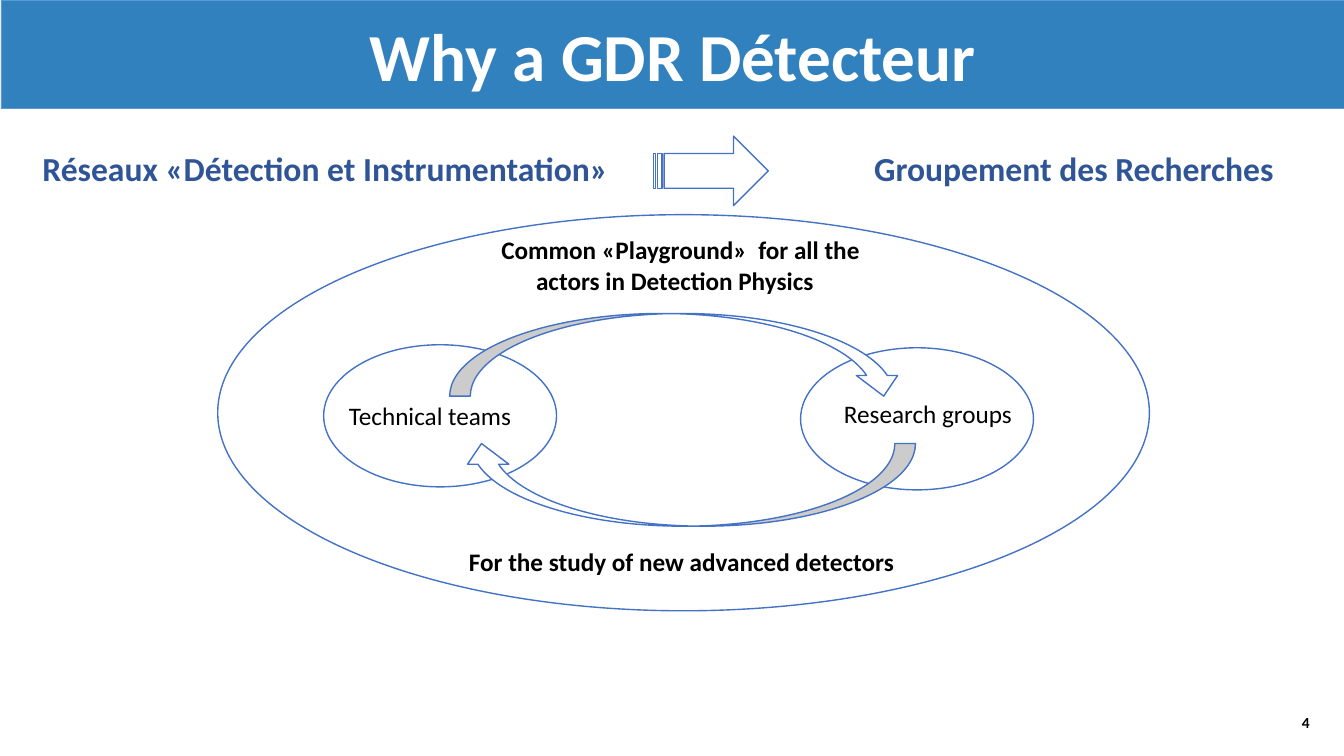
from pptx import Presentation
from pptx.dml.color import RGBColor
from pptx.enum.shapes import MSO_SHAPE
from pptx.enum.text import MSO_ANCHOR, PP_ALIGN
from pptx.util import Inches, Pt

BLUE = "4472C4"
HEADING = "2F5597"
BLACK = "000000"
WHITE = "FFFFFF"


def rgb(color):
    return RGBColor.from_string(color)


def write(sp, text, size, color, bold=False, align=PP_ALIGN.LEFT,
          anchor=MSO_ANCHOR.TOP, wrap=True, inset=0.05):
    tf = sp.text_frame
    tf.word_wrap = wrap
    tf.vertical_anchor = anchor
    tf.margin_left = tf.margin_right = Inches(inset)
    tf.margin_top = tf.margin_bottom = Inches(inset)
    tf.text = text
    p = tf.paragraphs[0]
    p.alignment = align
    font = p.runs[0].font
    font.name, font.size, font.bold = "Calibri", Pt(size), bold
    font.color.rgb = rgb(color)


def add_text(s, box, text, size, color=BLACK, **style):
    sp = s.shapes.add_textbox(*map(Inches, box))
    write(sp, text, size, color, **style)


def add_outlined(s, kind, box, fill=None, line=BLUE, width=1):
    sp = s.shapes.add_shape(kind, *map(Inches, box))
    sp.shadow.inherit = False
    if fill:
        sp.fill.solid()
        sp.fill.fore_color.rgb = rgb(fill)
    else:
        sp.fill.background()
    sp.line.color.rgb = rgb(line)
    sp.line.width = Pt(width)
    return sp


def add_header(s):
    banner = add_outlined(s, MSO_SHAPE.RECTANGLE, (0.01, 0, 13.33, 1.08),
                          "3181BE", "5B9BD5", 0.5)
    write(banner, "Why a GDR Détecteur", 48, WHITE, bold=True,
          align=PP_ALIGN.CENTER, anchor=MSO_ANCHOR.MIDDLE)
    add_text(s, (0.37, 1.42, 5.92, 0.88),
             "Réseaux «Détection et Instrumentation»", 24, HEADING, bold=True)
    add_outlined(s, MSO_SHAPE.STRIPED_RIGHT_ARROW, (6.48, 1.35, 1.14, 0.69), WHITE)
    add_text(s, (8.62, 1.42, 4.11, 0.88),
             "Groupement des Recherches", 24, HEADING, bold=True)


def add_playground(s):
    add_outlined(s, MSO_SHAPE.OVAL, (3.21, 3.42, 2.31, 1.41), WHITE)
    add_text(s, (3.41, 3.92, 1.91, 0.39), "Technical teams", 18, wrap=False)
    add_text(s, (8.32, 3.9, 1.92, 0.39), "Research groups", 18, wrap=False)
    add_outlined(s, MSO_SHAPE.OVAL, (2.16, 2.13, 9.24, 3.93))
    add_text(s, (4.75, 2.28, 4, 0.68),
             "Common «Playground»  for all the actors in Detection Physics  ",
             18, bold=True, align=PP_ALIGN.CENTER)
    add_text(s, (4.6, 5.37, 4.92, 0.39),
             "For the study of new advanced detectors", 18, bold=True, wrap=False)
    add_outlined(s, MSO_SHAPE.OVAL, (7.94, 3.45, 2.31, 1.41))


def add_exchange_arrows(s):
    for left, top, rotation in ((4.46, 3.11, 0), (4.57, 4.4, 180)):
        arrow = add_outlined(s, MSO_SHAPE.CURVED_DOWN_ARROW,
                             (left, top, 4.51, 0.82), WHITE)
        arrow.rotation = rotation


def main():
    prs = Presentation()
    prs.slide_width, prs.slide_height = Inches(13.33), Inches(7.5)
    s = prs.slides.add_slide(prs.slide_layouts[6])
    add_header(s)
    add_playground(s)
    add_text(s, (12.85, 7.09, 0.14, 0.17), "4", 11, bold=True, wrap=False,
             align=PP_ALIGN.RIGHT, anchor=MSO_ANCHOR.BOTTOM, inset=0)
    add_exchange_arrows(s)
    prs.save("out.pptx")


if __name__ == "__main__":
    main()
